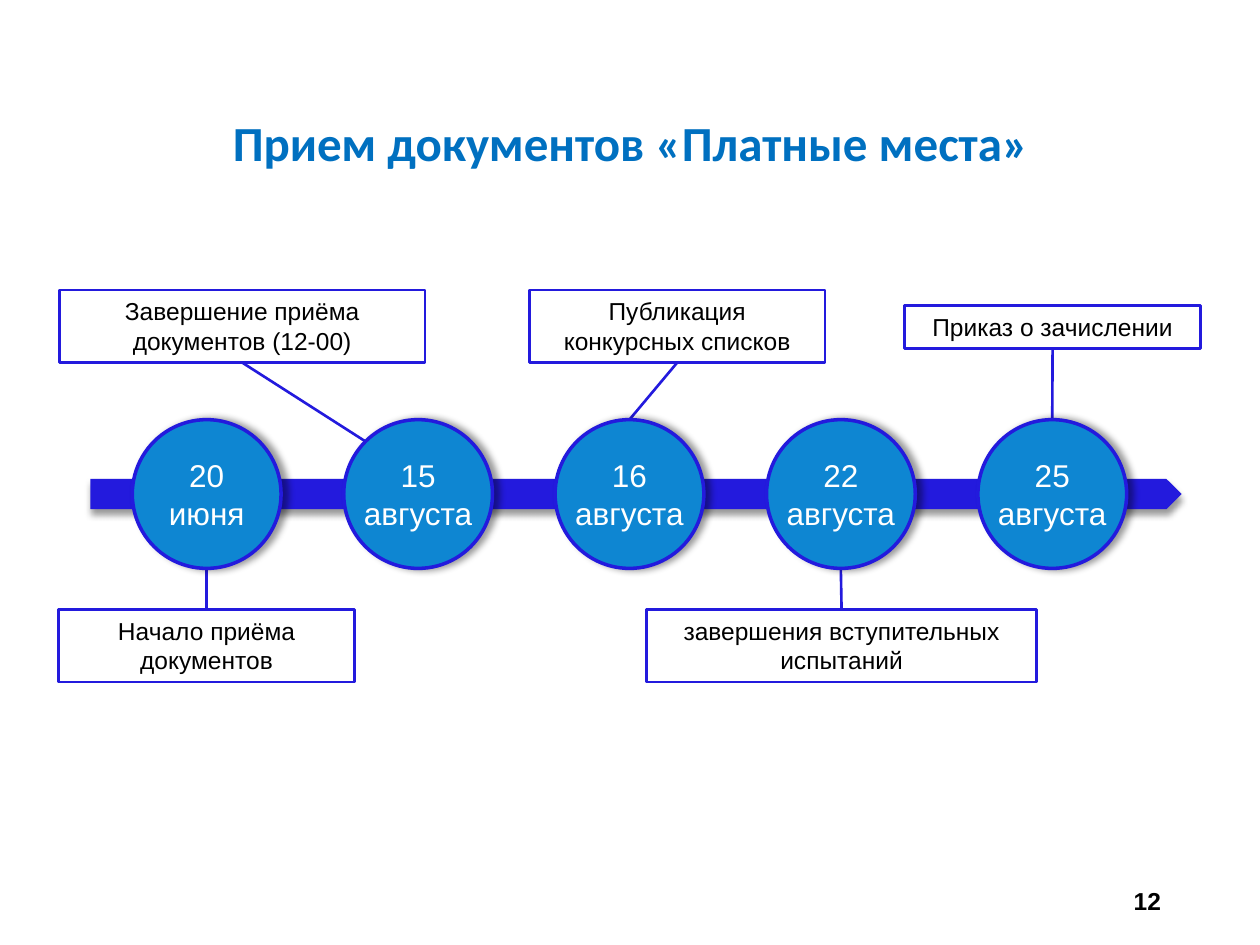
from math import cos, sin, radians

from pptx import Presentation
from pptx.dml.color import RGBColor
from pptx.enum.shapes import MSO_CONNECTOR as Link, MSO_SHAPE as Form
from pptx.enum.text import MSO_ANCHOR as Anchor, PP_ALIGN as Align
from pptx.oxml import parse_xml
from pptx.oxml.ns import nsdecls
from pptx.util import Pt

EDGE, DISC, HEAD = "231ADD", "0E86D2", "0070C0"
BLACK, WHITE = "000000", "FFFFFF"

# Day and month in each circle
DATES = ["20\nиюня", "15\nавгуста", "16\nавгуста", "22\nавгуста", "25\nавгуста"]

# Text, circle index, angle of the link on the circle, middle x, top, width, height
NOTES = [
    ("Начало приёма документов", 0, 90, 84.1, 182.5, 169, 41.5),
    ("Завершение приёма документов (12-00)", 1, 225, 104.4, 0, 209, 41.5),
    ("Публикация конкурсных списков", 2, 270, 353, 0, 169, 41.5),
    ("завершения вступительных испытаний", 3, 90, 446.9, 182.5, 223, 41.5),
    ("Приказ о зачислении", 4, 270, 567.5, 9, 169, 24.5),
]


def color(code):
    return RGBColor.from_string(code)


def write(frame, text, size, code, align=Align.CENTER, font="Arial", bold=False):
    frame.text = text
    for para in frame.paragraphs:
        para.alignment = align
        para.font.name = font
        para.font.size = Pt(size)
        para.font.bold = bold
        para.font.color.rgb = color(code)


def draw(slide, form, x, y, w, h, fill=None, edge=None, width=1.5):
    shape = slide.shapes.add_shape(form, Pt(x), Pt(y), Pt(w), Pt(h))
    shape.shadow.inherit = False
    if fill:
        shape.fill.solid()
        shape.fill.fore_color.rgb = color(fill)
    else:
        shape.fill.background()
    if edge:
        shape.line.color.rgb = color(edge)
        shape.line.width = Pt(width)
    else:
        shape.line.fill.background()
    return shape


def shade(shape, angle):
    effects = shape._element.spPr.find(".//{*}effectLst")
    effects.append(parse_xml(
        f'<a:outerShdw {nsdecls("a")} blurRad="{Pt(4)}" dist="{Pt(3)}" '
        f'dir="{angle * 60000}" rotWithShape="0"><a:srgbClr val="{BLACK}">'
        '<a:alpha val="40000"/></a:srgbClr></a:outerShdw>'))


def join(slide, x1, y1, x2, y2):
    line = slide.shapes.add_connector(
        Link.STRAIGHT, Pt(x1), Pt(y1), Pt(x2), Pt(y2))
    line.line.color.rgb = color(EDGE)
    line.line.width = Pt(1.5)
    line._element.spPr.append(parse_xml(f'<a:effectLst {nsdecls("a")}/>'))


def add_title(slide, x, y, w, h):
    title = slide.shapes.title
    title.left, title.top, title.width, title.height = Pt(x), Pt(y), Pt(w), Pt(h)
    title.text_frame.word_wrap = False
    title.text_frame.vertical_anchor = Anchor.MIDDLE
    write(title.text_frame, "Прием документов «Платные места»", 28, HEAD,
          font="Calibri", bold=True)


def add_timeline(slide, x, y, w):
    size, step = 85, 120.8
    radius, first, mid = size / 2, x + 84.1, y + 116.6

    # Notes and their links to the circles
    for text, index, angle, center, top, width, height in NOTES:
        note = draw(slide, Form.RECTANGLE, x + center - width / 2, y + top,
                    width, height, edge=EDGE)
        note.text_frame.word_wrap = True
        note.text_frame.vertical_anchor = Anchor.TOP
        write(note.text_frame, text, 14, BLACK)
        turn = radians(angle)
        near = y + top + (height if angle > 180 else 0)
        join(slide, first + index * step + radius * cos(turn),
             mid + radius * sin(turn), x + center, near)

    # Time arrow
    band = draw(slide, Form.PENTAGON, x + 17.6, mid - 8.6, w - 28.4, 17.2, fill=EDGE)
    shade(band, 90)

    # Date circles
    for index, date in enumerate(DATES):
        disc = draw(slide, Form.OVAL, first + index * step - radius, mid - radius,
                    size, size, DISC, EDGE, 2)
        shade(disc, 0)
        disc.text_frame.word_wrap = False
        disc.text_frame.vertical_anchor = Anchor.MIDDLE
        write(disc.text_frame, date, 18, WHITE)


def add_number(slide, x, y, w, h):
    box = slide.shapes.add_textbox(Pt(x), Pt(y), Pt(w), Pt(h))
    box.text_frame.word_wrap = True
    box.text_frame.vertical_anchor = Anchor.MIDDLE
    write(box.text_frame, "12", 14, BLACK, Align.RIGHT, bold=True)


def main():
    deck = Presentation()
    deck.slide_width, deck.slide_height = Pt(720), Pt(540)
    slide = deck.slides.add_slide(deck.slide_layouts[5])
    add_title(slide, 123, 60.5, 474.5, 41)
    add_timeline(slide, 34, 165.7, 652)
    add_number(slide, 508.5, 500.5, 162, 28.5)
    deck.save("out.pptx")


if __name__ == "__main__":
    main()
